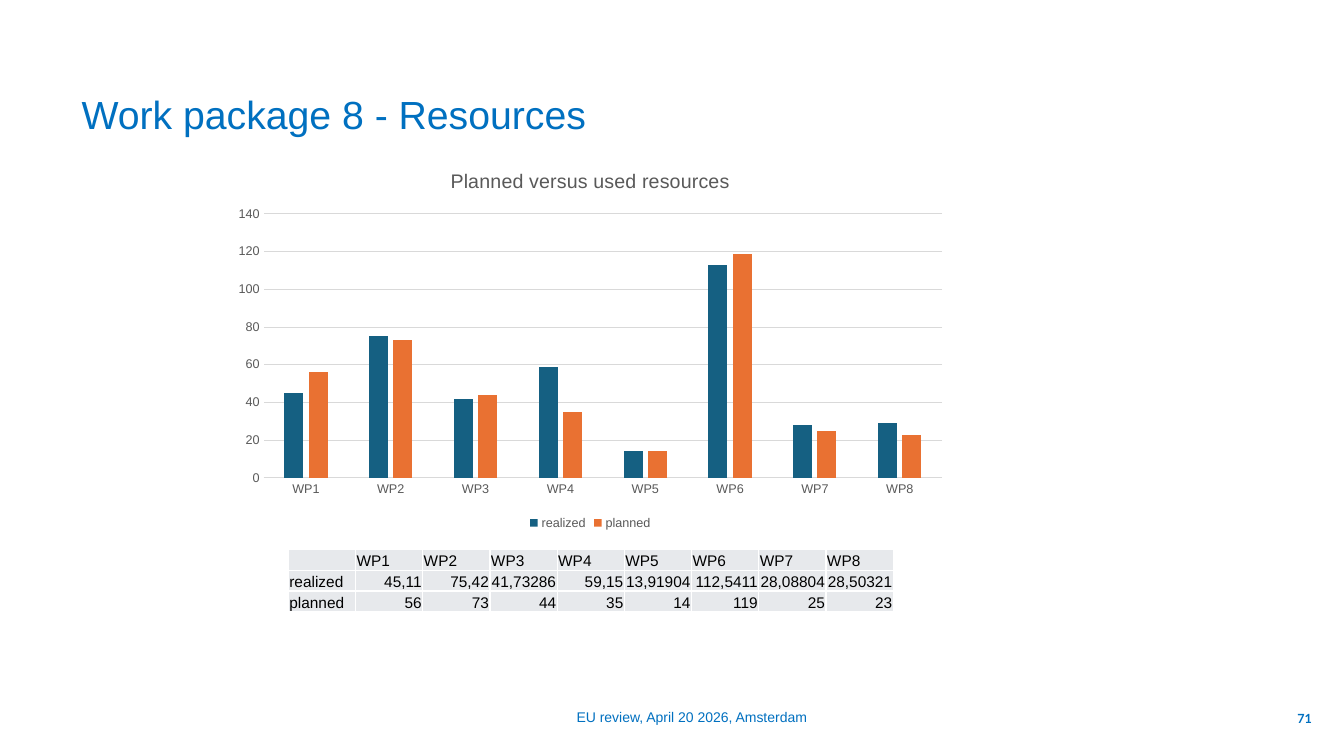
"""Build the work package 8 resources slide with its chart and table."""
import dataclasses

import lxml.etree
import pptx
import pptx.chart.data
import pptx.dml.color
import pptx.enum.chart
import pptx.enum.dml
import pptx.enum.text
import pptx.oxml.ns
import pptx.slide
import pptx.table
import pptx.text.text
import pptx.util

Inches = pptx.util.Inches
Pt = pptx.util.Pt
RGBColor = pptx.dml.color.RGBColor
Align = pptx.enum.text.PP_ALIGN
Anchor = pptx.enum.text.MSO_ANCHOR

BLUE = RGBColor(0x00, 0x70, 0xC0)
BLACK = RGBColor(0x00, 0x00, 0x00)
WHITE = RGBColor(0xFF, 0xFF, 0xFF)
GREY = RGBColor(0x59, 0x59, 0x59)
GRID_GREY = RGBColor(0xD9, 0xD9, 0xD9)
CELL_GREY = RGBColor(0xE7, 0xE9, 0xEC)
TEAL = RGBColor(0x15, 0x60, 0x82)
ORANGE = RGBColor(0xE9, 0x71, 0x32)

CELL_SIZE = 11


@dataclasses.dataclass(frozen=True)
class Style:
    size: float
    color: RGBColor
    name: str = "Arial"
    bold: bool = False


@dataclasses.dataclass(frozen=True)
class Footer:
    text: str
    left: float
    top: float
    width: float
    style: Style


@dataclasses.dataclass(frozen=True)
class Resource:
    name: str
    amounts: list[str]
    color: RGBColor

    def rounded(self) -> list[int]:
        return [round(float(amount.replace(",", "."))) for amount in self.amounts]


PACKAGES = [f"WP{number}" for number in range(1, 9)]
RESOURCES = [
    Resource("realized", ["45,11", "75,42", "41,73286", "59,15", "13,91904",
                          "112,5411", "28,08804", "28,50321"], TEAL),
    Resource("planned", ["56", "73", "44", "35", "14", "119", "25", "23"], ORANGE),
]
FOOTERS = [
    Footer("EU review, April 20 2026, Amsterdam", 3.58, 6.91, 4.52, Style(10, BLUE)),
    Footer("71", 12.52, 6.93, 0.59, Style(9, BLUE, "Lato", True)),
]


def apply_style(font: pptx.text.text.Font, style: Style) -> None:
    font.size = Pt(style.size)
    font.name = style.name
    font.bold = style.bold
    font.color.rgb = style.color


def add_run(paragraph, text: str, style: Style, alignment: Align = Align.LEFT) -> None:
    paragraph.alignment = alignment
    run = paragraph.add_run()
    run.text = text
    apply_style(run.font, style)


def set_title(slide: pptx.slide.Slide, text: str) -> None:
    title = slide.shapes.title
    title.left, title.top = Inches(0.71), Inches(0.4)
    title.width, title.height = Inches(11.7), Inches(1.45)
    title.text_frame.vertical_anchor = Anchor.MIDDLE
    add_run(title.text_frame.paragraphs[0], text, Style(28, BLUE))


def add_footer(slide: pptx.slide.Slide, footer: Footer) -> None:
    box = slide.shapes.add_textbox(Inches(footer.left), Inches(footer.top),
                                   Inches(footer.width), Inches(0.4))
    box.text_frame.word_wrap = True
    box.text_frame.vertical_anchor = Anchor.MIDDLE
    add_run(box.text_frame.paragraphs[0], footer.text, footer.style, Align.RIGHT)


def add_resource_chart(slide: pptx.slide.Slide) -> None:
    data = pptx.chart.data.CategoryChartData()
    data.categories = PACKAGES
    for resource in RESOURCES:
        data.add_series(resource.name, resource.rounded())
    chart = slide.shapes.add_chart(
        pptx.enum.chart.XL_CHART_TYPE.COLUMN_CLUSTERED,
        Inches(2.22), Inches(1.51), Inches(7.27), Inches(3.79), data).chart
    apply_style(chart.font, Style(10, BLACK))

    chart.has_title = True
    add_run(chart.chart_title.text_frame.paragraphs[0],
            "Planned versus used resources", Style(14, GREY), Align.CENTER)
    chart.chart_title.include_in_layout = False
    chart.has_legend = True
    chart.legend.position = pptx.enum.chart.XL_LEGEND_POSITION.BOTTOM
    chart.legend.include_in_layout = False
    apply_style(chart.legend.font, Style(9, GREY))

    for axis in (chart.category_axis, chart.value_axis):
        axis.major_tick_mark = pptx.enum.chart.XL_TICK_MARK.NONE
        axis.minor_tick_mark = pptx.enum.chart.XL_TICK_MARK.NONE
        apply_style(axis.tick_labels.font, Style(9, GREY))
    chart.value_axis.format.line.fill.background()
    chart.value_axis.has_major_gridlines = True
    for line in (chart.category_axis.format.line,
                 chart.value_axis.major_gridlines.format.line):
        line.color.rgb = GRID_GREY
        line.width = Pt(0.75)

    plot = chart.plots[0]
    plot.vary_by_categories = False
    plot.gap_width = 219
    plot.overlap = -27
    for series, resource in zip(plot.series, RESOURCES):
        series.format.fill.solid()
        series.format.fill.fore_color.rgb = resource.color


def add_borders(cell: pptx.table._Cell) -> None:
    qn = pptx.oxml.ns.qn
    properties = cell._tc.get_or_add_tcPr()
    for index, side in enumerate(("lnL", "lnR", "lnT", "lnB")):
        line = lxml.etree.Element(qn(f"a:{side}"), w=str(Pt(1)))
        fill = lxml.etree.SubElement(line, qn("a:solidFill"))
        lxml.etree.SubElement(fill, qn("a:srgbClr"), val=str(WHITE))
        properties.insert(index, line)


def fill_cell(cell: pptx.table._Cell, text: str, alignment: Align) -> None:
    cell.margin_left = cell.margin_right = cell.margin_top = Inches(0.01)
    cell.margin_bottom = Inches(0)
    cell.vertical_anchor = Anchor.BOTTOM
    cell.fill.solid()
    cell.fill.fore_color.rgb = CELL_GREY
    add_borders(cell)
    paragraph = cell.text_frame.paragraphs[0]
    if text:
        add_run(paragraph, text, Style(CELL_SIZE, BLACK), alignment)
    else:
        lxml.etree.SubElement(paragraph._p, pptx.oxml.ns.qn("a:endParaRPr"),
                              sz=str(CELL_SIZE * 100))


def add_resource_table(slide: pptx.slide.Slide) -> None:
    rows = [["", *PACKAGES]]
    rows += [[resource.name, *resource.amounts] for resource in RESOURCES]
    table = slide.shapes.add_table(len(rows), len(rows[0]), Inches(2.86), Inches(5.45),
                                   Inches(6), Inches(0.62)).table
    table.first_row = False
    table.horz_banding = False
    for row_index, row in enumerate(rows):
        for column_index, text in enumerate(row):
            is_amount = row_index > 0 and column_index > 0
            fill_cell(table.cell(row_index, column_index), text,
                      Align.RIGHT if is_amount else Align.LEFT)


def main() -> None:
    presentation = pptx.Presentation()
    presentation.slide_width = Inches(13.33)
    presentation.slide_height = Inches(7.5)
    slide = presentation.slides.add_slide(presentation.slide_layouts[5])
    set_title(slide, "Work package 8 - Resources")
    for footer in FOOTERS:
        add_footer(slide, footer)
    add_resource_chart(slide)
    add_resource_table(slide)
    presentation.save("out.pptx")


if __name__ == "__main__":
    main()
